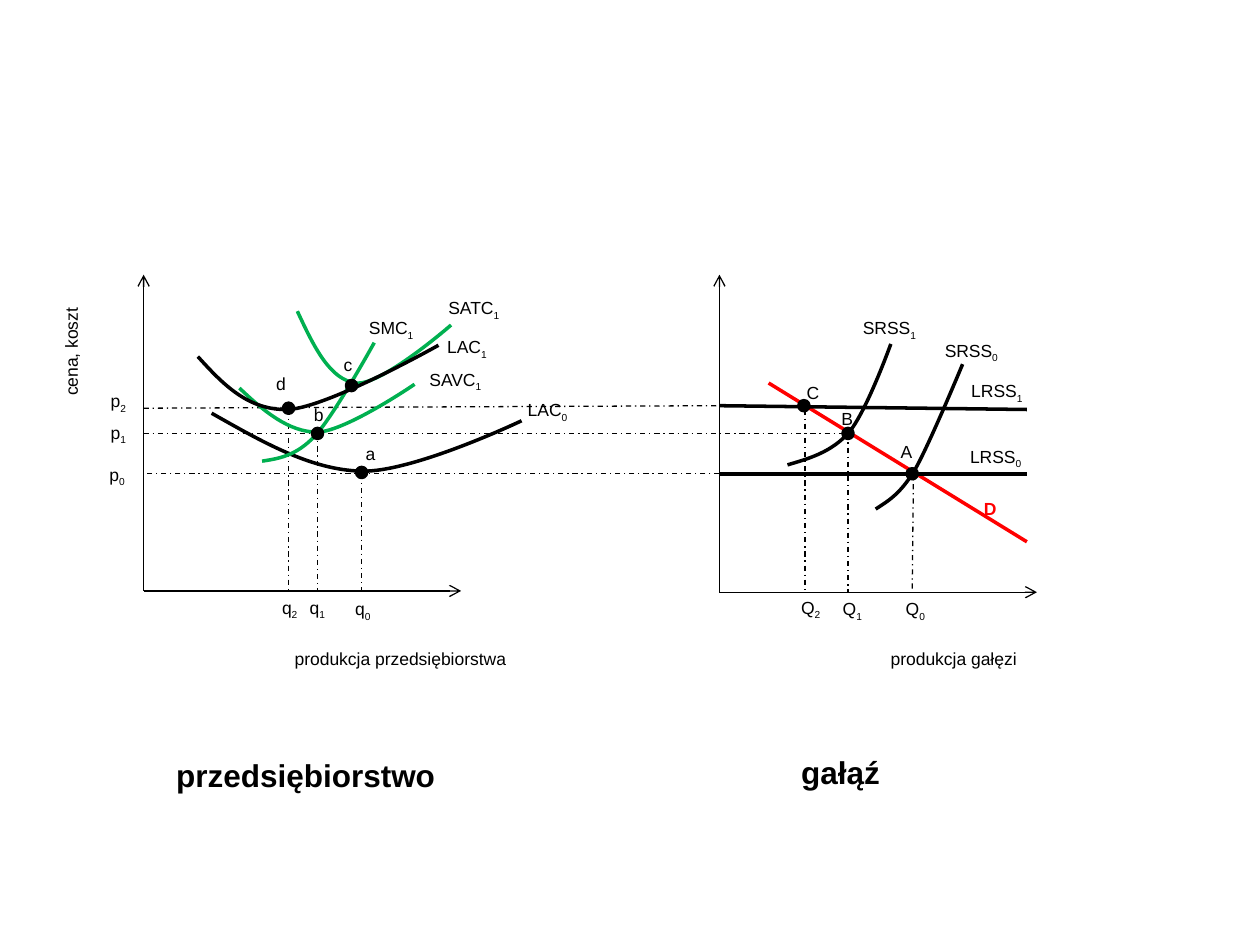
from pptx import Presentation
from pptx.dml.color import RGBColor
from pptx.enum.dml import MSO_LINE_DASH_STYLE as Dash
from pptx.enum.shapes import MSO_CONNECTOR as Conn, MSO_SHAPE as Shape
from pptx.enum.text import MSO_AUTO_SIZE as AutoSize
from pptx.oxml.ns import qn
from pptx.util import Pt
from lxml.etree import SubElement

PX = 9144  # EMU per px, 100 px to the inch
COLORS = {"ink": "000000", "demand": "FF0000", "short_run": "00B050"}
FONT = "Arial"
THIN, THICK = 0.75, 2
LABEL_H = 27

# Two line ends: x1, y1, x2, y2
AXES = [
    (114, 469, 114, 218), (114, 469, 366, 469),
    (571, 470, 571, 218), (571, 470, 823, 470),
]
GUIDES = [
    (571, 376, 114, 376), (114, 344, 673, 344), (114, 324, 571, 322),  # prices
    (287, 376, 287, 469), (252, 343, 252, 470), (229, 325, 229, 470),  # firm
    (725, 373, 724, 469), (673, 344, 673, 470), (639, 325, 639, 470),  # industry
]
INDUSTRY_LINES = [
    (610, 304, 815, 430, "demand"),
    (571, 376, 815, 376, "ink"),
    (571, 322, 815, 325, "ink"),
]

# Colour, then start point followed by two Bezier arcs of three points each
CURVES = [
    ("ink", [(695, 404), (704, 398), (714, 393), (726, 373),
             (737, 354), (764, 289), (764, 289)]),  # SRSS0
    ("ink", [(168, 328), (207, 350), (246, 373), (287, 374),
             (328, 375), (414, 334), (414, 334)]),  # LAC0
    ("ink", [(625, 369), (642, 364), (660, 359), (674, 343),
             (688, 326), (707, 273), (707, 273)]),  # SRSS1
    ("short_run", [(190, 308), (209, 326), (229, 343), (252, 343),
                   (275, 342), (329, 305), (329, 305)]),  # SAVC1
    ("short_run", [(208, 366), (221, 364), (235, 362), (250, 346),
                   (265, 330), (297, 272), (297, 272)]),  # SMC1
    ("short_run", [(236, 247), (249, 275), (262, 302), (283, 304),
                   (303, 306), (358, 258), (358, 258)]),  # SATC1
    ("ink", [(157, 283), (177, 305), (197, 326), (229, 325),
             (261, 323), (348, 274), (348, 274)]),  # LAC1
]

DOT = 8
DOTS = [(720, 372), (283, 371), (669, 340), (248, 340),
        (275, 302), (225, 320), (634, 318)]

# Text (an underscore starts the subscript), left, top, width
LABELS = [
    ("produkcja przedsiębiorstwa", 224, 509, 213),
    ("produkcja gałęzi", 697, 509, 165),
    ("p_0", 77, 363, 36), ("p_1", 78, 330, 36), ("p_2", 78, 305, 36),
    ("q_0", 272, 470, 39), ("q_1", 236, 469, 40), ("q_2", 214, 469, 40),
    ("Q_0", 709, 470, 40), ("Q_1", 659, 470, 47), ("Q_2", 626, 469, 39),
    ("a", 284, 347, 16), ("b", 240, 316, 19),
    ("c", 263, 276, 20), ("d", 210, 291, 19),
    ("A", 705, 345, 24), ("B", 658, 319, 24), ("C", 633, 298, 17),
    ("LAC_0", 409, 312, 63), ("LAC_1", 345, 262, 59),
    ("SAVC_1", 331, 288, 71), ("SMC_1", 283, 247, 59), ("SATC_1", 346, 231, 79),
    ("SRSS_0", 740, 265, 73), ("SRSS_1", 675, 247, 73),
    ("LRSS_0", 760, 349, 75), ("LRSS_1", 761, 297, 75),
]


def rgb(name):
    return RGBColor.from_string(COLORS[name])


def add_line(slide, x1, y1, x2, y2, color="ink", width=THIN, dash=None, arrow=False):
    c = slide.shapes.add_connector(Conn.STRAIGHT, *(v * PX for v in (x1, y1, x2, y2)))
    c.line.color.rgb = rgb(color)
    c.line.width = Pt(width)
    if dash:
        c.line.dash_style = dash
    if arrow:
        SubElement(c.line._get_or_add_ln(), qn("a:tailEnd"), type="arrow")
    SubElement(c._element.spPr, qn("a:effectLst"))


def add_curve(slide, color, pts):
    anchors = pts[::3]
    fb = slide.shapes.build_freeform(*anchors[0], scale=PX)
    fb.add_line_segments(anchors[1:], close=False)
    sp = fb.convert_to_shape()
    # Turn each straight segment into a Bezier arc
    left, top = (min(axis) for axis in zip(*anchors))
    segments = list(sp._element.iter(qn("a:lnTo")))
    for i, segment in enumerate(segments):
        segment.tag = qn("a:cubicBezTo")
        for pt in list(segment):
            segment.remove(pt)
        for x, y in pts[3 * i + 1:3 * i + 4]:
            SubElement(segment, qn("a:pt"), x=str(x - left), y=str(y - top))
    sp.shadow.inherit = False
    sp.fill.background()
    sp.line.color.rgb = rgb(color)
    sp.line.width = Pt(THICK)


def add_dot(slide, x, y):
    sp = slide.shapes.add_shape(Shape.OVAL, x * PX, y * PX, DOT * PX, DOT * PX)
    sp.shadow.inherit = False
    sp.fill.solid()
    sp.fill.fore_color.rgb = rgb("ink")
    sp.line.color.rgb = rgb("ink")
    sp.line.width = Pt(THICK)


def add_label(slide, text, x, y, w, h=LABEL_H, size=10, color="ink", bold=False):
    sp = slide.shapes.add_textbox(x * PX, y * PX, w * PX, h * PX)
    tf = sp.text_frame
    tf.word_wrap = True
    tf.auto_size = AutoSize.SHAPE_TO_FIT_TEXT
    base, _, sub = text.partition("_")
    p = tf.paragraphs[0]
    p.text = base
    if sub:
        r = p.add_run()
        r.text = sub
        r.font._element.set("baseline", "-25000")
    for r in p.runs:
        r.font.name = FONT
        r.font.size = Pt(size)
        r.font.bold = bold
        r.font.color.rgb = rgb(color)
    return sp


def main():
    prs = Presentation()
    prs.slide_width, prs.slide_height = 1000 * PX, 750 * PX
    slide = prs.slides.add_slide(prs.slide_layouts[6])

    # Axes and dashed guides
    for ends in AXES:
        add_line(slide, *ends, arrow=True)
    for ends in GUIDES:
        add_line(slide, *ends, dash=Dash.DASH_DOT)

    # Demand, supply and cost curves
    for line in INDUSTRY_LINES:
        add_line(slide, *line, width=THICK)
    for color, pts in CURVES:
        add_curve(slide, color, pts)

    # Equilibrium points
    for x, y in DOTS:
        add_dot(slide, x, y)

    # Labels
    for label in LABELS:
        add_label(slide, *label)
    add_label(slide, "D", 771, 390, 43, color="demand", bold=True)
    add_label(slide, "cena, koszt", -34, 220, 181).rotation = 270

    # Panel headings
    add_label(slide, "przedsiębiorstwo", 130, 595, 236, h=40, size=18, bold=True)
    add_label(slide, "gałąź", 626, 593, 220, h=40, size=18, bold=True)

    prs.save("out.pptx")


if __name__ == "__main__":
    main()
